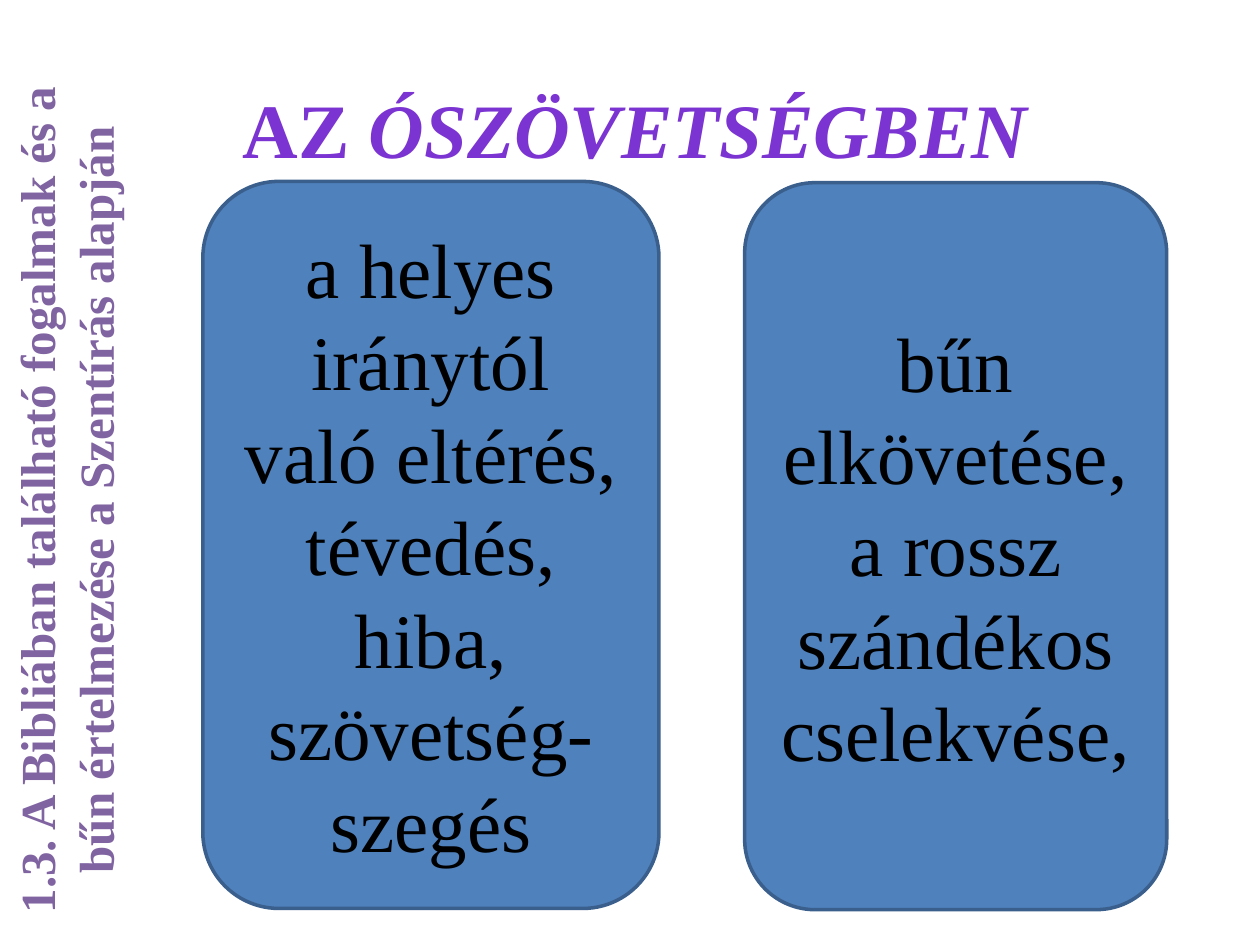
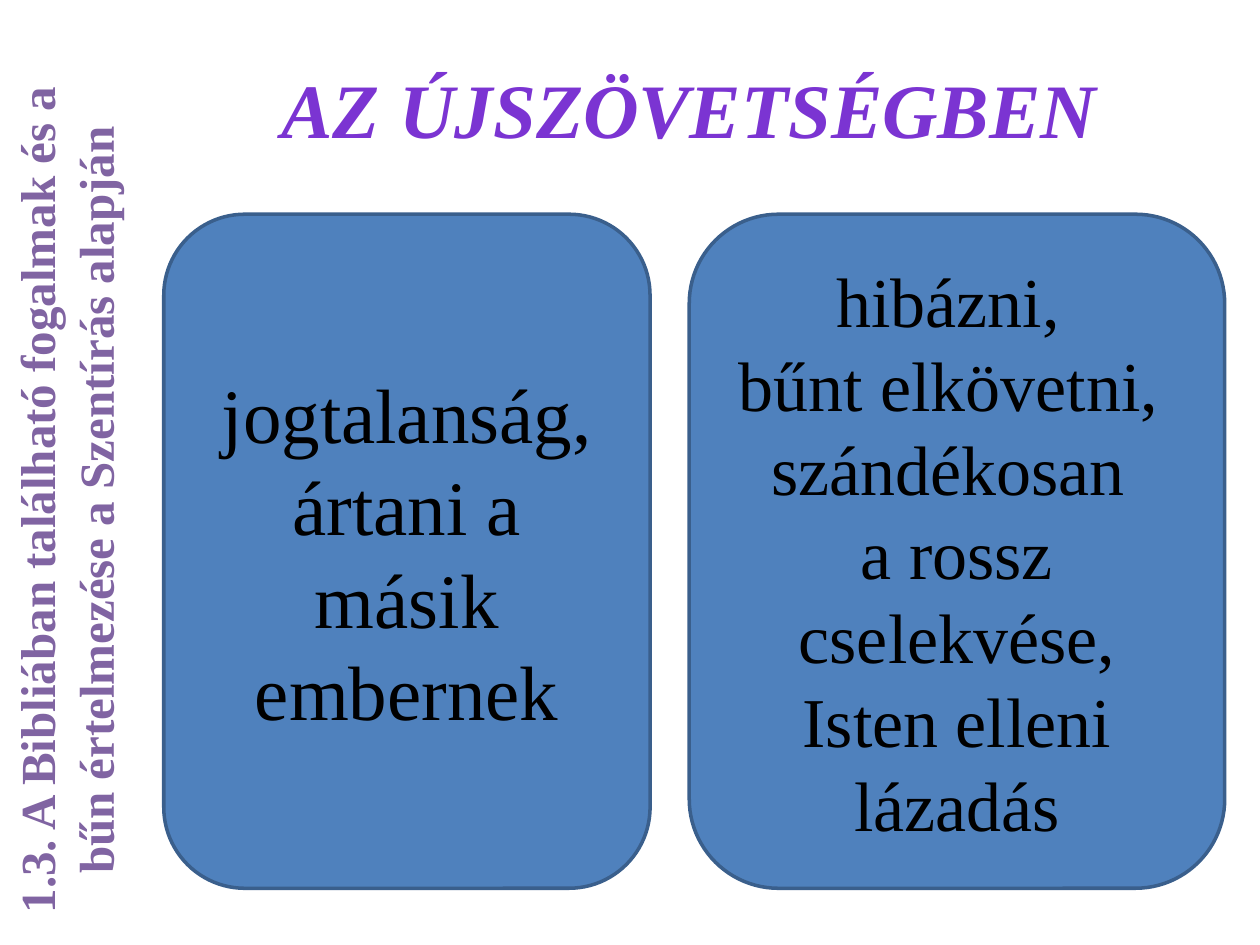
"""Build two slides comparing the notions of sin in the Old and New Testament."""
from dataclasses import dataclass
from typing import Any, NamedTuple

from pptx import Presentation
from pptx.dml.color import RGBColor
from pptx.enum.shapes import MSO_SHAPE
from pptx.enum.text import MSO_ANCHOR, PP_ALIGN
from pptx.util import Inches, Pt

ROUNDED = MSO_SHAPE.ROUNDED_RECTANGLE
MIDDLE = MSO_ANCHOR.MIDDLE
TOP = MSO_ANCHOR.TOP
CENTER = PP_ALIGN.CENTER

WIDTH, HEIGHT = Inches(10), Inches(7.5)
COLUMN, ROW = WIDTH / 100, HEIGHT / 75

COLORS = {
    "title": "7B34D2",
    "side": "8064A2",
    "card": "4F81BD",
    "border": "3A5F8C",
    "text": "000000",
}
FONT = "Times New Roman"
TITLE_FORMAT = {"name": FONT, "size": Pt(44), "bold": True}
SIDE_FORMAT = {"name": FONT, "size": Pt(28), "bold": True}
SIDE_TEXT = "1.3. A Bibliában található fogalmak és a bűn értelmezése a Szentírás alapján"


class Area(NamedTuple):
    column: float
    row: float
    columns: float
    rows: float

    def lengths(self) -> tuple[int, ...]:
        scales = (COLUMN, ROW, COLUMN, ROW)
        return tuple(round(value * scale) for value, scale in zip(self, scales))


class Piece(NamedTuple):
    text: str
    italic: bool = False


@dataclass
class Card:
    area: Area
    lines: list[str]
    size: int = 44


@dataclass
class Page:
    title_area: Area
    title: list[Piece]
    cards: list[Card]


SIDE_AREA = Area(0, 4.4, 11.4, 70.6)
PAGES = [
    Page(
        Area(13, 6, 76.4, 8.4),
        [Piece("AZ "), Piece("ÓSZÖVETSÉGBEN ", True)],
        [
            Card(
                Area(16.1, 14.4, 36.2, 57.7),
                ["a helyes iránytól való eltérés, tévedés, hiba, szövetség-szegés"],
            ),
            Card(
                Area(59.1, 14.5, 33.5, 57.7),
                ["bűn elkövetése, a rossz szándékos", "cselekvése, "],
            ),
        ],
    ),
    Page(
        Area(19.3, 4.4, 72.4, 8.4),
        [Piece("AZ ÚJSZÖVETSÉGBEN ", True)],
        [
            Card(Area(13, 17, 38.6, 53.5), ["jogtalanság, ártani a másik embernek"]),
            Card(
                Area(54.7, 17, 42.5, 53.5),
                [
                    "hibázni, ",
                    "bűnt elkövetni, ",
                    "szándékosan ",
                    "a rossz cselekvése,",
                    "Isten elleni lázadás",
                ],
                40,
            ),
        ],
    ),
]


def color(name: str) -> RGBColor:
    return RGBColor.from_string(COLORS[name])


def write(
    shape: Any,
    lines: list[list[Piece]],
    font_format: dict[str, Any],
    color_name: str,
    anchor: Any = TOP,
) -> None:
    frame = shape.text_frame
    frame.word_wrap = True
    frame.vertical_anchor = anchor
    for index, pieces in enumerate(lines):
        paragraph = frame.add_paragraph() if index else frame.paragraphs[0]
        paragraph.alignment = CENTER
        for piece in pieces:
            run = paragraph.add_run()
            run.text = piece.text
            for attribute, value in {**font_format, "italic": piece.italic}.items():
                setattr(run.font, attribute, value)
            run.font.color.rgb = color(color_name)


def draw_title(slide: Any, page: Page) -> None:
    text_box = slide.shapes.add_textbox(*page.title_area.lengths())
    write(text_box, [page.title], TITLE_FORMAT, "title")


def draw_card(slide: Any, card: Card) -> None:
    shape = slide.shapes.add_shape(ROUNDED, *card.area.lengths())
    shape.shadow.inherit = False
    shape.fill.solid()
    shape.fill.fore_color.rgb = color("card")
    shape.line.color.rgb = color("border")
    shape.line.width = Pt(2)
    card_format = {"name": FONT, "size": Pt(card.size)}
    write(shape, [[Piece(line)] for line in card.lines], card_format, "text", MIDDLE)


def draw_side_heading(slide: Any) -> None:
    text_box = slide.shapes.add_textbox(*SIDE_AREA.lengths())
    write(text_box, [[Piece(SIDE_TEXT)]], SIDE_FORMAT, "side")
    text_box.element.txBody.bodyPr.set("vert", "vert270")


def main() -> None:
    presentation = Presentation()
    presentation.slide_width, presentation.slide_height = WIDTH, HEIGHT
    blank_layout = presentation.slide_layouts[6]
    for page in PAGES:
        slide = presentation.slides.add_slide(blank_layout)
        draw_title(slide, page)
        for card in page.cards:
            draw_card(slide, card)
        draw_side_heading(slide)
    presentation.save("out.pptx")


if __name__ == "__main__":
    main()
